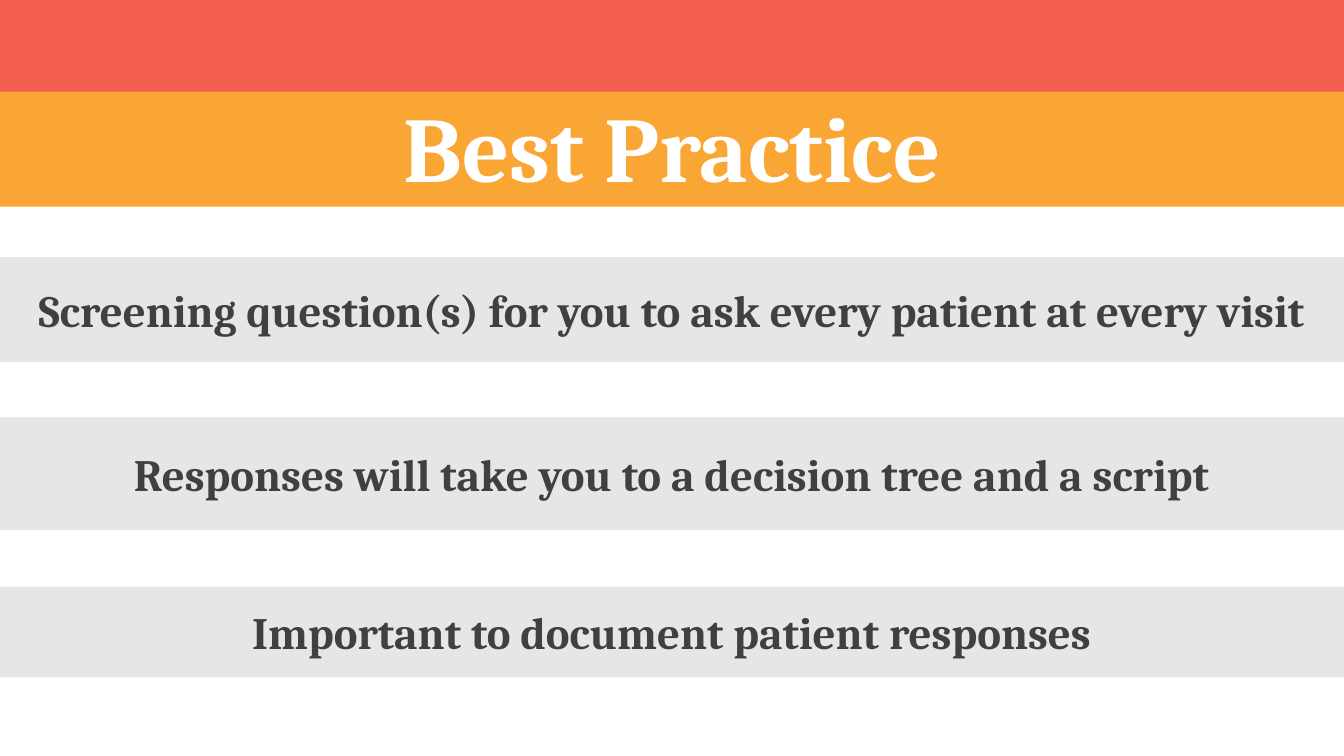
from pptx import Presentation
from pptx.dml.color import RGBColor
from pptx.enum import shapes, text
from pptx.util import Inches, Pt

CORAL = RGBColor(0xF1, 0x5D, 0x4F)
ORANGE = RGBColor(0xFA, 0xA6, 0x34)
GREY = RGBColor(0xE7, 0xE6, 0xE6)
CHARCOAL = RGBColor(0x40, 0x40, 0x40)
WHITE = RGBColor(0xFF, 0xFF, 0xFF)
SLIDE_WIDTH = Inches(13.33)

PRACTICES = [
    (2.55, 1.04, "Screening question(s) for you to ask every patient at every visit"),
    (4.14, 1.12, "Responses will take you to a decision tree and a script"),
    (5.82, 0.9, "Important to document patient responses"),
]


def add_band(slide, top, height, color):
    """Add a full-width coloured band and return it."""
    band = slide.shapes.add_shape(
        shapes.MSO_SHAPE.RECTANGLE, 0, Inches(top), SLIDE_WIDTH, Inches(height))
    band.shadow.inherit = False
    band.fill.solid()
    band.fill.fore_color.rgb = color
    band.line.fill.background()
    return band


def write_centred(band, wording, size, color, anchor):
    """Write one bold centred line in a band."""
    frame = band.text_frame
    frame.word_wrap = True
    frame.vertical_anchor = anchor
    line = frame.paragraphs[0]
    line.alignment = text.PP_ALIGN.CENTER
    run = line.add_run()
    run.text = wording
    run.font.name = "Cambria"
    run.font.size = Pt(size)
    run.font.bold = True
    run.font.color.rgb = color


def main():
    """Build the best practice slide and save it."""
    deck = Presentation()
    deck.slide_width = SLIDE_WIDTH
    deck.slide_height = Inches(7.5)
    slide = deck.slides.add_slide(deck.slide_layouts[6])

    for top, height, practice in PRACTICES:
        band = add_band(slide, top, height, GREY)
        write_centred(band, practice, 32, CHARCOAL, text.MSO_ANCHOR.MIDDLE)

    title = add_band(slide, 0.84, 1.21, ORANGE)
    write_centred(title, "Best Practice", 66, WHITE, text.MSO_ANCHOR.TOP)
    title.text_frame.auto_size = text.MSO_AUTO_SIZE.SHAPE_TO_FIT_TEXT

    add_band(slide, 0, 0.91, CORAL)
    deck.save("out.pptx")


if __name__ == "__main__":
    main()
